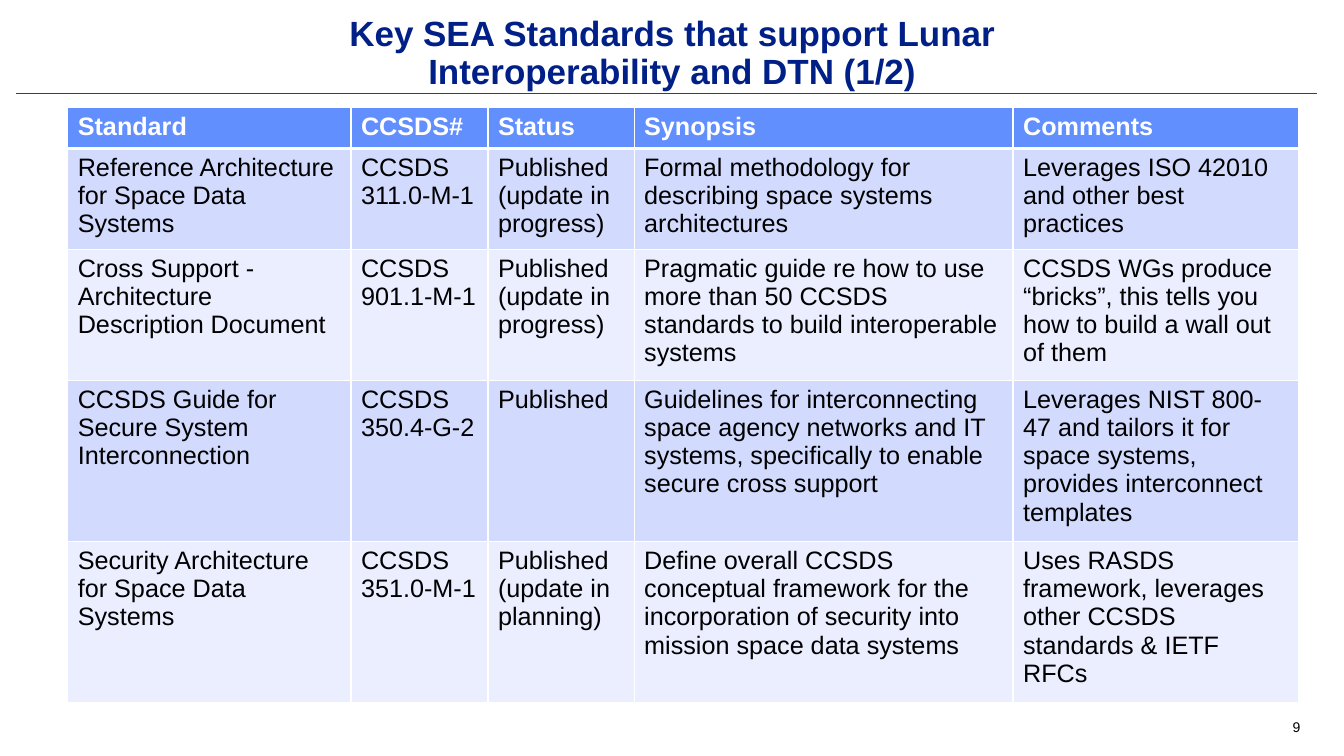
from lxml.etree import SubElement
from pptx import Presentation
from pptx.dml.color import RGBColor
from pptx.enum.shapes import MSO_CONNECTOR
from pptx.enum.text import MSO_ANCHOR, PP_ALIGN
from pptx.oxml.ns import qn
from pptx.util import Pt

TITLE = "Key SEA Standards that support Lunar\vInteroperability and DTN (1/2)"
PAGE_NUMBER = "9"
HEADINGS = ("Standard", "CCSDS#", "Status", "Synopsis", "Comments")
STANDARDS = [
    ("Reference Architecture for Space Data Systems",
     "CCSDS 311.0-M-1",
     "Published (update in progress)",
     "Formal methodology for describing space systems architectures",
     "Leverages ISO 42010 and other best practices"),
    ("Cross Support - Architecture Description Document",
     "CCSDS 901.1-M-1",
     "Published (update in progress)",
     "Pragmatic guide re how to use more than 50 CCSDS standards "
     "to build interoperable systems",
     "CCSDS WGs produce “bricks”, this tells you how to build a wall out of them"),
    ("CCSDS Guide for Secure System Interconnection",
     "CCSDS 350.4-G-2",
     "Published",
     "Guidelines for interconnecting space agency networks and IT\n"
     "systems, specifically to enable secure cross support",
     "Leverages NIST 800-47 and tailors it for space systems, "
     "provides interconnect templates"),
    ("Security Architecture for Space Data Systems",
     "CCSDS 351.0-M-1",
     "Published (update in planning)",
     "Define overall CCSDS conceptual framework for the incorporation "
     "of security into mission space data systems",
     "Uses RASDS framework, leverages other CCSDS standards & IETF RFCs"),
]
COLUMN_WIDTHS = (202.3, 97.9, 104.4, 270.7, 203.8)
ROW_HEIGHTS = (29.5, 67, 88, 108, 108)
TABLE_LEFT, TABLE_TOP = 48.4, 76.5

WHITE = RGBColor(0xFF, 0xFF, 0xFF)
BLACK = RGBColor(0x00, 0x00, 0x00)
NAVY = RGBColor(0x01, 0x20, 0x87)
RULE_BLUE = RGBColor(0x33, 0x33, 0x99)
HEADER_BLUE = RGBColor(0x61, 0x8F, 0xFD)
BANDS = (RGBColor(0xD2, 0xDB, 0xFE), RGBColor(0xEA, 0xEE, 0xFF))


def write(frame, text, size, color, bold=False, **paragraph_format):
    frame.text = text
    font_format = {"name": "Arial", "size": Pt(size), "bold": bold}
    for paragraph in frame.paragraphs:
        for name, value in paragraph_format.items():
            setattr(paragraph, name, value)
        for run in paragraph.runs:
            for name, value in font_format.items():
                setattr(run.font, name, value)
            run.font.color.rgb = color


def add_label(slide, bounds, frame_format, *text_args, **text_format):
    frame = slide.shapes.add_textbox(*map(Pt, bounds)).text_frame
    for name, value in {"word_wrap": True, **frame_format}.items():
        setattr(frame, name, value)
    write(frame, *text_args, **text_format)


def add_borders(cell, widths):
    """Give the cell white borders; widths maps a side's tag to points."""
    properties = cell._tc.get_or_add_tcPr()
    for side, width in widths.items():
        border = SubElement(properties, qn(f"a:{side}"), w=str(Pt(width)))
        fill = SubElement(border, qn("a:solidFill"))
        SubElement(fill, qn("a:srgbClr"), val=str(WHITE))


def add_standards_table(slide):
    rows = [HEADINGS, *STANDARDS]
    table = slide.shapes.add_table(
        len(rows), len(HEADINGS), Pt(TABLE_LEFT), Pt(TABLE_TOP),
        Pt(sum(COLUMN_WIDTHS)), Pt(sum(ROW_HEIGHTS))).table
    for column, width in zip(table.columns, COLUMN_WIDTHS):
        column.width = Pt(width)
    for r, (texts, height) in enumerate(zip(rows, ROW_HEIGHTS)):
        table.rows[r].height = Pt(height)
        header = r == 0
        borders = {"lnL": 1, "lnR": 1, "lnT": 3 if r == 1 else 1,
                   "lnB": 3 if header else 1}
        for c, text in enumerate(texts):
            cell = table.cell(r, c)
            add_borders(cell, borders)
            cell.fill.solid()
            cell.fill.fore_color.rgb = HEADER_BLUE if header else BANDS[(r - 1) % 2]
            write(cell.text_frame, text, 18, WHITE if header else BLACK, header)


def main():
    presentation = Presentation()
    presentation.slide_width, presentation.slide_height = Pt(960), Pt(540)
    slide = presentation.slides.add_slide(presentation.slide_layouts[6])

    title_rule = slide.shapes.add_connector(
        MSO_CONNECTOR.STRAIGHT, Pt(11.5), Pt(66.5), Pt(941), Pt(66.5))
    title_rule.line.color.rgb = RULE_BLUE
    title_rule.line.width = Pt(0.13)
    SubElement(title_rule._element.spPr, qn("a:effectLst"))

    add_label(slide, (48, 12, 864, 52), {"margin_top": 0, "margin_bottom": 0},
              TITLE, 25, NAVY, True, alignment=PP_ALIGN.CENTER, line_spacing=0.9)
    add_label(slide, (712, 510, 224, 18), {"vertical_anchor": MSO_ANCHOR.MIDDLE},
              PAGE_NUMBER, 10, BLACK, alignment=PP_ALIGN.RIGHT)
    add_standards_table(slide)
    presentation.save("out.pptx")


if __name__ == "__main__":
    main()
